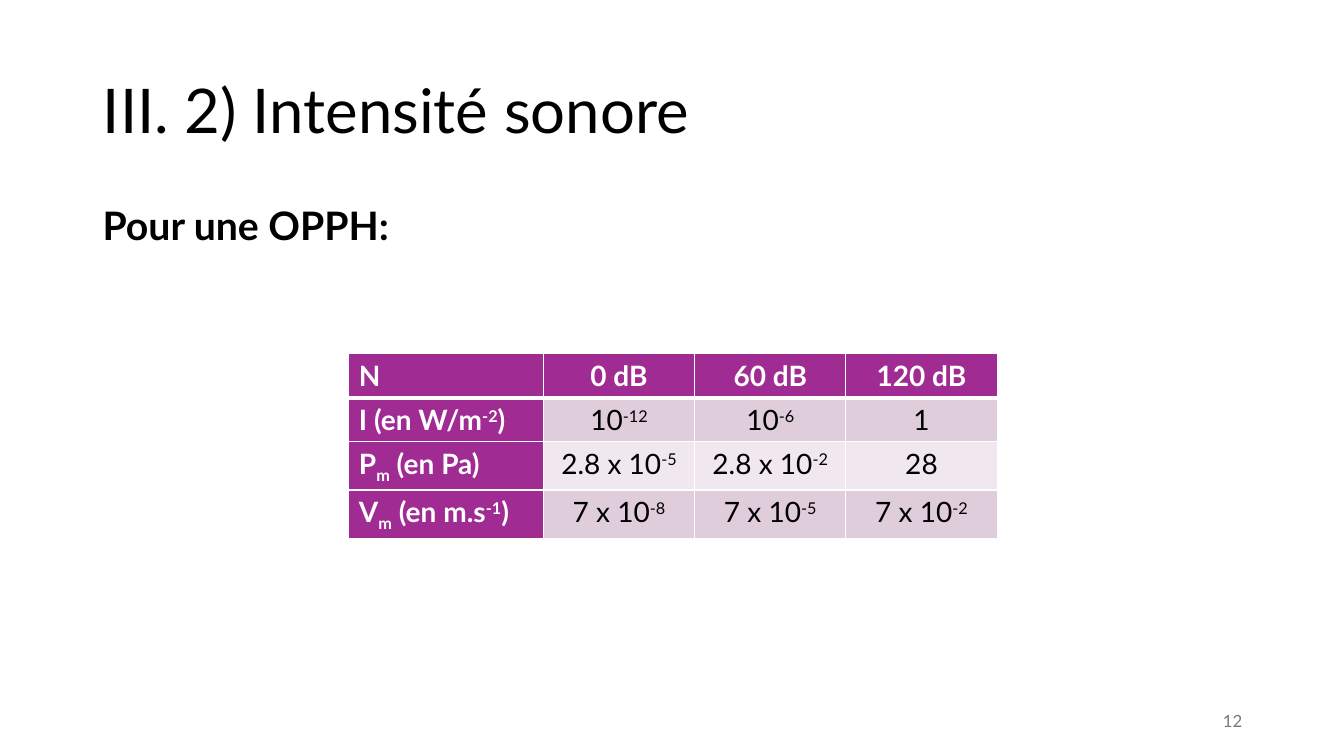
from lxml.etree import SubElement
from pptx import Presentation
from pptx.dml.color import RGBColor
from pptx.enum.text import MSO_ANCHOR, MSO_AUTO_SIZE, PP_ALIGN
from pptx.oxml.ns import qn
from pptx.util import Inches, Pt

COLORS = {
    "text": "000000",
    "white": "FFFFFF",
    "number": "797979",
    "header": "A02B93",
    "odd": "DFCDDC",
    "even": "F0E8EE",
}
BASELINES = {"^": "30000", "_": "-25000"}


def write(frame, text, size, color, bold=False, align=PP_ALIGN.LEFT):
    paragraph = frame.paragraphs[0]
    paragraph.alignment = align
    for part in text.split("|"):
        run = paragraph.add_run()
        run.text = part.lstrip("^_")
        formats = {"name": "Lato", "size": Pt(size), "bold": bold}
        for name, value in formats.items():
            setattr(run.font, name, value)
        run.font.color.rgb = RGBColor.from_string(COLORS[color])
        if part[0] in BASELINES:
            run.font._element.set("baseline", BASELINES[part[0]])
    return paragraph


def add_border(cell, side, width):
    line = SubElement(cell._tc.get_or_add_tcPr(), qn(f"a:ln{side}"), w=str(Pt(width)))
    fill = SubElement(line, qn("a:solidFill"))
    SubElement(fill, qn("a:srgbClr"), val=COLORS["white"])


presentation = Presentation()
presentation.slide_width = Inches(13.33)
presentation.slide_height = Inches(7.5)
slide = presentation.slides.add_slide(presentation.slide_layouts[5])

title = slide.shapes.title
title_box = {"left": 0.92, "top": 0.4, "width": 11.5, "height": 1.45}
for name, value in title_box.items():
    setattr(title, name, Inches(value))
title.text_frame.auto_size = MSO_AUTO_SIZE.NONE
title.text_frame.vertical_anchor = MSO_ANCHOR.MIDDLE
write(title.text_frame, "III. 2) Intensité sonore", 44, "text").line_spacing = 0.9

ROWS = [
    ["N", "0 dB", "60 dB", "120 dB"],
    ["I (en W/m|^-2|)", "10|^-12", "10|^-6", "1"],
    ["P|_m| (en Pa)", "2.8 x 10|^-5", "2.8 x 10|^-2", "28"],
    ["V|_m| (en m.s|^-1|)", "7 x 10|^-8", "7 x 10|^-5", "7 x 10|^-2"],
]
table = slide.shapes.add_table(
    4, 4, Inches(3.46), Inches(3.51), Inches(6.43), Inches(1.73)
).table
table.first_col = True
for column, width in zip(table.columns, [1.93, 1.5, 1.5, 1.5]):
    column.width = Inches(width)

for row_index, values in enumerate(ROWS):
    for column_index, value in enumerate(values):
        cell = table.cell(row_index, column_index)
        header = row_index == 0 or column_index == 0
        band = "odd" if row_index % 2 else "even"
        for side in "LRTB":
            under_header = (side, row_index) in [("B", 0), ("T", 1)]
            add_border(cell, side, 3 if under_header else 1)
        cell.fill.solid()
        cell.fill.fore_color.rgb = RGBColor.from_string(COLORS["header" if header else band])
        align = PP_ALIGN.CENTER if column_index else PP_ALIGN.LEFT
        write(cell.text_frame, value, 20, "white" if header else "text", header, align)

body = slide.shapes.add_textbox(Inches(0.92), Inches(2), Inches(11.5), Inches(4.76))
body.text_frame.word_wrap = True
heading = write(body.text_frame, "Pour une OPPH:", 28, "text", True)
heading.line_spacing = 0.9
heading.space_before = Pt(10)

number = slide.shapes.add_textbox(Inches(9.42), Inches(6.95), Inches(3), Inches(0.4))
number.text_frame.word_wrap = True
number.text_frame.vertical_anchor = MSO_ANCHOR.MIDDLE
write(number.text_frame, "12", 12, "number", align=PP_ALIGN.RIGHT)

presentation.save("out.pptx")
